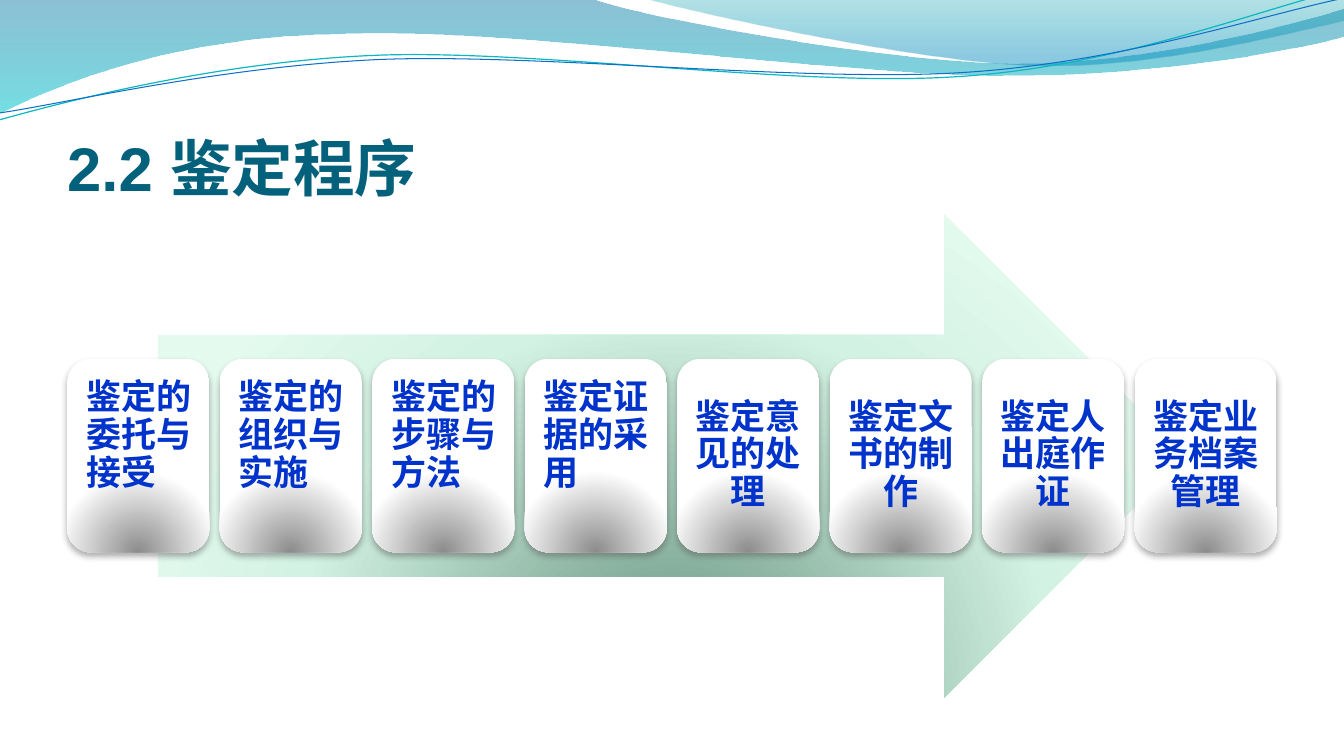
import lxml.etree
import pptx
import pptx.dml.color
import pptx.enum.shapes
import pptx.enum.text
import pptx.oxml
import pptx.oxml.ns
import pptx.util

SHAPES = pptx.enum.shapes.MSO_SHAPE
ALIGN = pptx.enum.text.PP_ALIGN
ANCHOR = pptx.enum.text.MSO_ANCHOR
CENTRE_BELOW = (50, 130, 50, -30)

WAVES = [
    dict(points=[(0, 0), (5.87, -0.01), (6.34, 0.17, 8.85, 0.63, 10.11, 0.63),
                 (11.38, 0.63, 12.78, 0.26, 13.33, 0.09), (13.35, 0.36),
                 (13.11, 0.44, 11.6, 0.76, 9.94, 0.75), (8.29, 0.75, 5.09, 0.28, 3.43, 0.34),
                 (1.72, 0.36, 0.61, 0.83, -0.01, 1.13)],
         stops=[(0, "0074A1", 45), (100, "00C6CF", 55)]),
    dict(points=[(6.39, -0.01), (6.79, 0.11, 9.09, 0.62, 10.25, 0.65),
                 (11.41, 0.69, 12.82, 0.32, 13.33, 0.21), (13.33, 0)],
         stops=[(0, "00A1A9", 30), (80, "008BBF", 45)]),
    dict(points=[(-0.01, 1.19), (0.64, 1.01, 2.11, 0.62, 3.69, 0.55),
                 (5.27, 0.48, 7.9, 0.87, 9.5, 0.76), (11.1, 0.66, 12.52, 0.08, 13.31, -0.1)],
         line="0AB8BF", weight=0.85),
    dict(points=[(0, 1.12), (0.63, 1.03, 2.18, 0.66, 3.78, 0.59),
                 (5.37, 0.53, 7.96, 0.82, 9.55, 0.72), (11.15, 0.62, 12.55, 0.14, 13.34, -0.02)],
         line="0F6FC6", weight=0.75),
]
LEFT_STEPS = ["鉴定的委托与接受", "鉴定的组织与实施", "鉴定的步骤与方法", "鉴定证据的采用"]
CENTRED_STEPS = ["鉴定意见的处理", "鉴定文书的制作", "鉴定人出庭作证", "鉴定业务档案管理"]


def colour(code):
    """Turn a hex string into a colour."""
    return pptx.dml.color.RGBColor.from_string(code)


def element(parent, tag, **attributes):
    """Append a drawing element with the given attributes."""
    child = lxml.etree.SubElement(parent, pptx.oxml.ns.qn(tag))
    for name, value in attributes.items():
        child.set(name, str(value))
    return child


def tint(parent, code, alpha=100):
    """Append a colour with an opacity in percent."""
    shade = element(parent, "a:srgbClr", val=code)
    if alpha < 100:
        element(shade, "a:alpha", val=alpha * 1000)


def gradient(shape, stops, centre=None):
    """Fill a shape downwards, or outwards from a centre rectangle."""
    shape.fill.solid()
    solid = shape._element.spPr.find(pptx.oxml.ns.qn("a:solidFill"))
    fill = lxml.etree.Element(pptx.oxml.ns.qn("a:gradFill"), rotWithShape="1")
    stop_list = element(fill, "a:gsLst")
    for position, *shade in stops:
        tint(element(stop_list, "a:gs", pos=position * 1000), *shade)
    if centre:
        sides = {side: share * 1000 for side, share in zip("ltrb", centre)}
        element(element(fill, "a:path", path="circle"), "a:fillToRect", **sides)
    else:
        element(fill, "a:lin", ang=5400000, scaled=0)
    solid.getparent().replace(solid, fill)


def write(box, text, size, code, font, align=ALIGN.LEFT, anchor=ANCHOR.MIDDLE,
          insets=(0.1, 0.1, 0.1, 0.1), leading=1.0):
    """Write one bold paragraph into a box."""
    frame = box.text_frame
    frame.word_wrap = True
    frame.auto_size = pptx.enum.text.MSO_AUTO_SIZE.NONE
    frame.vertical_anchor = anchor
    (frame.margin_left, frame.margin_top,
     frame.margin_right, frame.margin_bottom) = map(pptx.util.Inches, insets)
    para = frame.paragraphs[0]
    para.alignment = align
    para.line_spacing = leading
    span = para.add_run()
    span.text = text
    span.font.size = pptx.util.Pt(size)
    span.font.bold = True
    span.font.name = font
    span.font.color.rgb = colour(code)
    element(span.font._element, "a:ea", typeface="Noto Sans CJK SC")


def bend(shape, segments):
    """Join the three lines of each six-number segment into one cubic curve."""
    lines = list(shape._element.iter(pptx.oxml.ns.qn("a:lnTo")))
    for segment in segments:
        count = len(segment) // 2
        joined, lines = lines[:count], lines[count:]
        if count == 3:
            curve = lxml.etree.Element(pptx.oxml.ns.qn("a:cubicBezTo"))
            joined[0].addprevious(curve)
            for line in joined:
                curve.append(line[0])
                line.getparent().remove(line)


class Board:
    """Draw on one slide, in shares of its size and cells of its grid."""

    columns, rows = 13.33, 7.5

    def __init__(self):
        """Start a deck with one title page."""
        self.deck = pptx.Presentation()
        self.deck.slide_width = pptx.util.Inches(self.columns)
        self.deck.slide_height = pptx.util.Inches(self.rows)
        self.page = self.deck.slides.add_slide(self.deck.slide_layouts[5])

    def place(self, left, top, width, height):
        """Turn shares of the slide into lengths."""
        wide, high = self.deck.slide_width, self.deck.slide_height
        return int(left * wide), int(top * high), int(width * wide), int(height * high)

    def title(self, text, area):
        """Move and format the title placeholder."""
        box = self.page.shapes.title
        box.left, box.top, box.width, box.height = self.place(*area)
        write(box, text, 44, "04617B", "Arial", anchor=ANCHOR.BOTTOM, insets=(0, 0.05, 0, 0))

    def wave(self, points, stops=None, line=None, weight=0):
        """Draw a filled wave or an open curve."""
        cell = self.deck.slide_width / self.columns
        knots = [(round(point[i] * cell), round(point[i + 1] * cell))
                 for point in points for i in range(0, len(point), 2)]
        builder = self.page.shapes.build_freeform(*knots[0], scale=1.0)
        builder.add_line_segments(knots[1:], close=bool(stops))
        shape = builder.convert_to_shape()
        bend(shape, points[1:])
        shape.shadow.inherit = False
        if stops:
            gradient(shape, stops)
            shape.line.fill.background()
        else:
            shape.fill.background()
            shape.line.color.rgb = colour(line)
            shape.line.width = pptx.util.Pt(weight)

    def block(self, kind, area, stops):
        """Draw a borderless preset shape lit from below."""
        shape = self.page.shapes.add_shape(kind, *self.place(*area))
        shape.shadow.inherit = False
        gradient(shape, stops, CENTRE_BELOW)
        shape.line.fill.background()
        return shape

    def card(self, text, area, **style):
        """Draw a rounded card with a soft shadow and a step's name."""
        shape = self.block(SHAPES.ROUNDED_RECTANGLE, area,
                           [(0, "8C8C8C"), (68, "FFFFFF"), (100, "FFFFFF")])
        effects = shape._element.spPr.find(pptx.oxml.ns.qn("a:effectLst"))
        shadow = element(effects, "a:outerShdw", blurRad=pptx.util.Pt(4.5),
                         dist=pptx.util.Pt(3), dir=5400000, rotWithShape=0)
        tint(shadow, "5A5A5A", 48)
        write(shape, text, 25, "0033CC", "Noto Sans CJK SC", leading=0.9, **style)


def main():
    """Build the procedure slide."""
    board = Board()
    for wave in WAVES:
        board.wave(**wave)
    board.title("2.2 鉴定程序", (0.05, 0.103, 0.9, 0.167))
    board.block(SHAPES.RIGHT_ARROW, (0.1175, 0.283, 0.765, 0.64),
                [(0, "638F7B"), (68, "D2F2E3"), (100, "E4FAEF")])
    steps = LEFT_STEPS + CENTRED_STEPS
    width = 0.1058
    pitch = (0.9 - width) / (len(steps) - 1)
    for index, text in enumerate(steps):
        if text in LEFT_STEPS:
            style = dict(align=ALIGN.LEFT, insets=(0.12, 0.1, 0.1, 0.48))
        else:
            style = dict(align=ALIGN.CENTER)
        board.card(text, (0.05 + index * pitch, 0.4745, width, 0.256), **style)
    board.deck.save("out.pptx")


if __name__ == "__main__":
    main()
